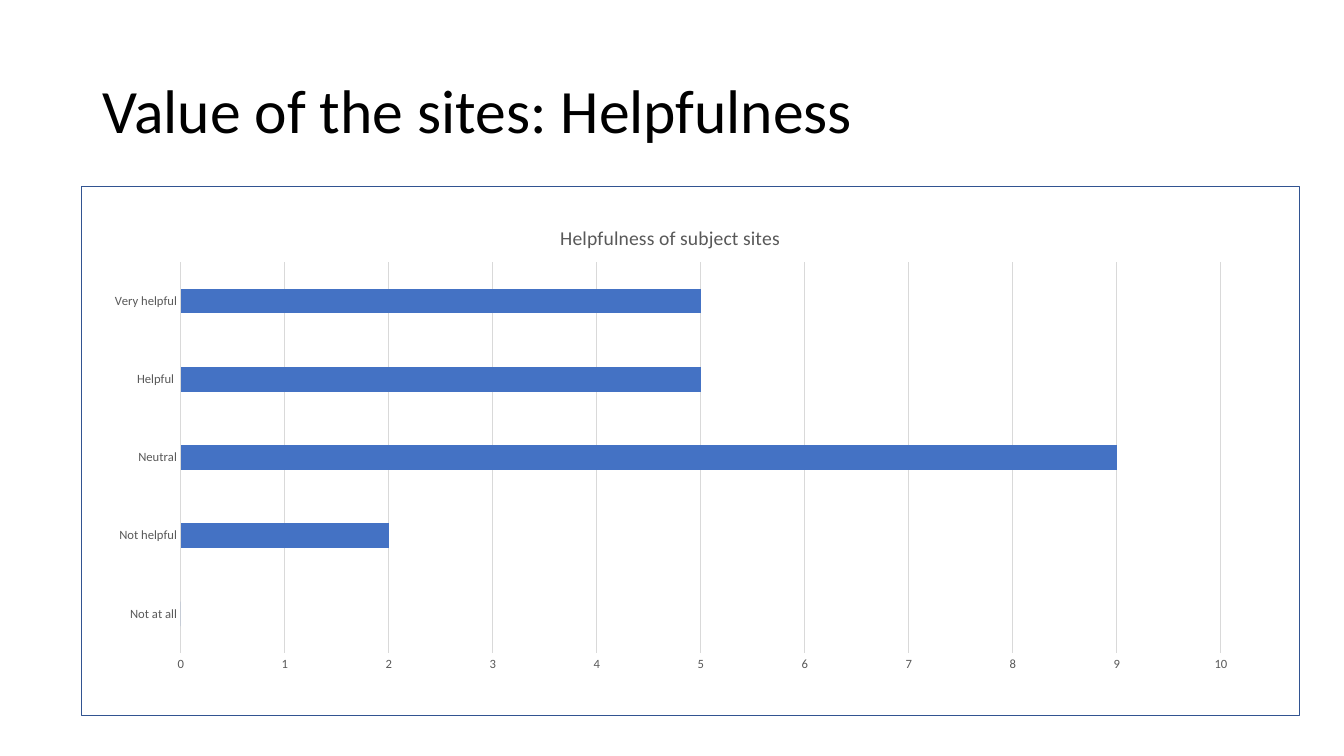
"""Build a slide with a bar chart of how helpful the subject sites are."""
from lxml import etree
from pptx import Presentation
from pptx.chart.data import CategoryChartData
from pptx.dml.color import RGBColor
from pptx.enum.chart import XL_CHART_TYPE, XL_TICK_MARK
from pptx.enum.shapes import MSO_SHAPE
from pptx.enum.text import MSO_ANCHOR
from pptx.oxml.ns import qn
from pptx.util import Inches, Pt

BAR = XL_CHART_TYPE.BAR_CLUSTERED
NO_TICK = XL_TICK_MARK.NONE
RECTANGLE = MSO_SHAPE.RECTANGLE
MIDDLE = MSO_ANCHOR.MIDDLE
BLACK = RGBColor(0x00, 0x00, 0x00)
GRAY = RGBColor(0x59, 0x59, 0x59)
GRID = RGBColor(0xD9, 0xD9, 0xD9)
BLUE = RGBColor(0x44, 0x72, 0xC4)
FRAME = RGBColor(0x32, 0x54, 0x91)


def style_font(font, size, color):
    font.name, font.size = "Calibri", Pt(size)
    font.bold = False
    font.color.rgb = color


def place(parent, index, settings):
    for old in parent.findall(qn("c:layout")):
        parent.remove(old)
    layout = etree.Element(qn("c:layout"))
    manual = etree.SubElement(layout, qn("c:manualLayout"))
    for tag, value in settings.items():
        etree.SubElement(manual, qn(f"c:{tag}")).set("val", str(value))
    parent.insert(index, layout)


prs = Presentation()
prs.slide_width, prs.slide_height = Inches(13.33), Inches(7.5)
s = prs.slides.add_slide(prs.slide_layouts[6])

title = s.shapes.add_textbox(Inches(0.92), Inches(0.4), Inches(11.5), Inches(1.45))
tf = title.text_frame
tf.word_wrap = True
tf.vertical_anchor = MIDDLE
p = tf.paragraphs[0]
p.line_spacing = 0.9
r = p.add_run()
r.text = "Value of the sites: Helpfulness"
style_font(r.font, 44, BLACK)

data = CategoryChartData(number_format="0")
data.categories = ["Not at all", "Not helpful", "Neutral", "Helpful ", "Very helpful"]
data.add_series("Series 1", [0, 2, 9, 5, 5])
chart = s.shapes.add_chart(
    BAR, Inches(0.92), Inches(2), Inches(11.5), Inches(4.76), data).chart
style_font(chart.font, 10, BLACK)
chart.has_legend = False
chart.has_title = True
chart_title = chart.chart_title.text_frame
chart_title.text = "Helpfulness of subject sites"
style_font(chart_title.paragraphs[0].runs[0].font, 14, GRAY)

plot = chart.plots[0]
plot.gap_width = 219
plot.vary_by_categories = False
fill = plot.series[0].format.fill
fill.solid()
fill.fore_color.rgb = BLUE

categories, values = chart.category_axis, chart.value_axis
for axis in (categories, values):
    axis.major_tick_mark = axis.minor_tick_mark = NO_TICK
    style_font(axis.tick_labels.font, 9, GRAY)
values.minimum_scale, values.maximum_scale, values.major_unit = 0, 10, 1
values.tick_labels.number_format = "0"
values.tick_labels.number_format_is_linked = False
values.format.line.fill.background()
values.has_major_gridlines = True
for line in (categories.format.line, values.major_gridlines.format.line):
    line.color.rgb = GRID
    line.width = Pt(0.75)

chart_xml = chart.element.find(qn("c:chart"))
edges = {"xMode": "edge", "yMode": "edge"}
place(chart_xml.find(qn("c:title")), 1, {**edges, "x": 0.4, "y": 0.04})
place(chart_xml.find(qn("c:plotArea")), 0,
      {"layoutTarget": "inner", **edges, "x": 0.076, "y": 0.126, "w": 0.897, "h": 0.815})

frame = s.shapes.add_shape(
    RECTANGLE, Inches(0.81), Inches(1.85), Inches(12.08), Inches(5.25))
frame.shadow.inherit = False
frame.fill.background()
frame.line.color.rgb = FRAME
frame.line.width = Pt(1)

prs.save("out.pptx")
